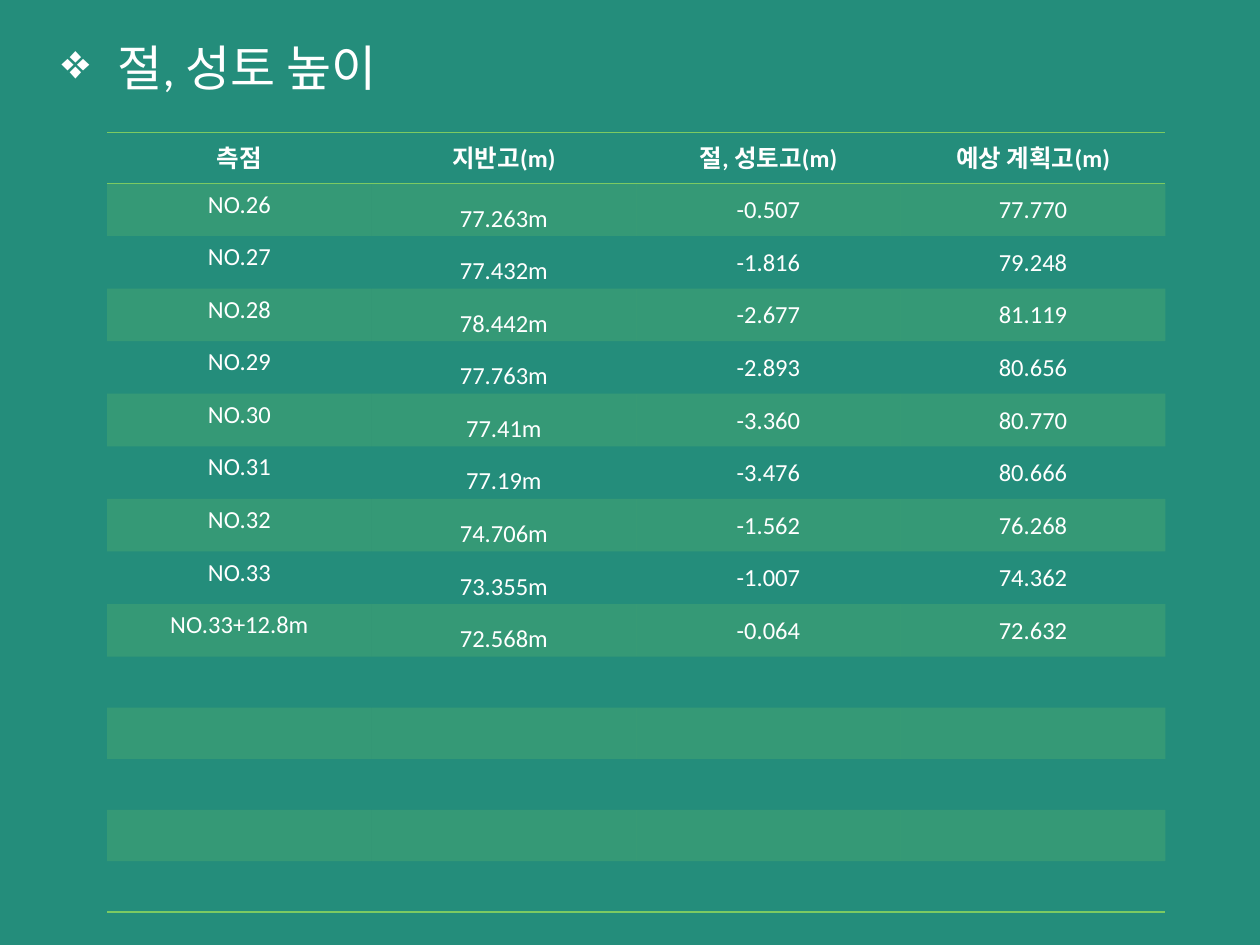
from dataclasses import dataclass

from lxml.etree import SubElement
from pptx import Presentation
from pptx.dml.color import RGBColor
from pptx.enum.text import MSO_ANCHOR as Anchor, PP_ALIGN as Align
from pptx.oxml import parse_xml
from pptx.oxml.ns import nsdecls, qn
from pptx.util import Pt


@dataclass(frozen=True)
class Theme:
    background: str = "248D7B"
    accent: str = "7CCA62"
    text: str = "FFFFFF"
    font: str = "Calibri"
    title_size: int = 28
    table_size: int = 14
    band_alpha: int = 20000


theme = Theme()


def add_span(para, text, size, bold=False):
    span = para.add_run()
    span.text = text
    span.font.name = theme.font
    span.font.size = Pt(size)
    span.font.bold = bold
    span.font.color.rgb = RGBColor.from_string(theme.text)


def add_border(cell, edge):
    line = parse_xml(
        f'<a:{edge} {nsdecls("a")} w="{Pt(1)}"><a:solidFill>'
        f'<a:srgbClr val="{theme.accent}"/></a:solidFill></a:{edge}>'
    )
    properties = cell._tc.get_or_add_tcPr()
    properties.insert(len(properties.findall(qn("a:lnT"))), line)


headers = ["측점", "지반고(m)", "절, 성토고(m)", "예상 계획고(m)"]
levels = [
    ["NO.26", "77.263m", "-0.507", "77.770"],
    ["NO.27", "77.432m", "-1.816", "79.248"],
    ["NO.28", "78.442m", "-2.677", "81.119"],
    ["NO.29", "77.763m", "-2.893", "80.656"],
    ["NO.30", "77.41m", "-3.360", "80.770"],
    ["NO.31", "77.19m", "-3.476", "80.666"],
    ["NO.32", "74.706m", "-1.562", "76.268"],
    ["NO.33", "73.355m", "-1.007", "74.362"],
    ["NO.33+12.8m", "72.568m", "-0.064", "72.632"],
]
empty_rows = 5
rows = [headers] + levels + [[""] * len(headers)] * empty_rows
row_height = 29.2
column_width = 151.2

deck = Presentation()
deck.slide_width, deck.slide_height = Pt(720), Pt(540)
page = deck.slides.add_slide(deck.slide_layouts[5])
page.background.fill.solid()
page.background.fill.fore_color.rgb = RGBColor.from_string(theme.background)

title = page.shapes.title
title.left, title.top, title.width, title.height = Pt(28), Pt(18), Pt(605), Pt(48)
title.text_frame.vertical_anchor = Anchor.TOP
title.text_frame.word_wrap = True
para = title.text_frame.paragraphs[0]
para.alignment = Align.LEFT
para.space_before = Pt(4)
bullet = para._p.get_or_add_pPr()
bullet.set("marL", str(Pt(32)))
bullet.set("indent", str(-Pt(32)))
SubElement(bullet, qn("a:buChar")).set("char", "❖")
add_span(para, "절, 성토 높이", theme.title_size)

frame = page.shapes.add_table(
    len(rows), len(headers), Pt(61.2), Pt(75.6),
    Pt(column_width * len(headers)), Pt(row_height * len(rows)),
)
table = frame.table
table.horz_banding = False
table._tbl.tblPr.find(qn("a:tableStyleId")).text = "{2D5ABB26-0587-4C30-8999-92F81FD0307C}"
for column in table.columns:
    column.width = Pt(column_width)

for r, values in enumerate(rows):
    table.rows[r].height = Pt(row_height)
    for c, value in enumerate(values):
        cell = table.cell(r, c)
        if r % 2:
            cell.fill.solid()
            cell.fill.fore_color.rgb = RGBColor.from_string(theme.accent)
            color = cell._tc.tcPr.find(qn("a:solidFill")).find(qn("a:srgbClr"))
            SubElement(color, qn("a:alpha")).set("val", str(theme.band_alpha))
        else:
            cell.fill.background()
        if r == 0:
            add_border(cell, "lnT")
        if r in (0, len(rows) - 1):
            add_border(cell, "lnB")
        if not value:
            continue
        para = cell.text_frame.paragraphs[0]
        para.alignment = Align.CENTER
        add_span(para, value, theme.table_size, bold=r == 0)
        if r and c:
            cell.vertical_anchor = Anchor.MIDDLE
            if c == 1:
                para.line_spacing = 1.6
                cell.margin_left = cell.margin_right = Pt(5)
                cell.margin_top = cell.margin_bottom = Pt(1.4)
            else:
                cell.margin_left = cell.margin_right = cell.margin_top = Pt(0.7)
                cell.margin_bottom = Pt(0)

deck.save("out.pptx")
